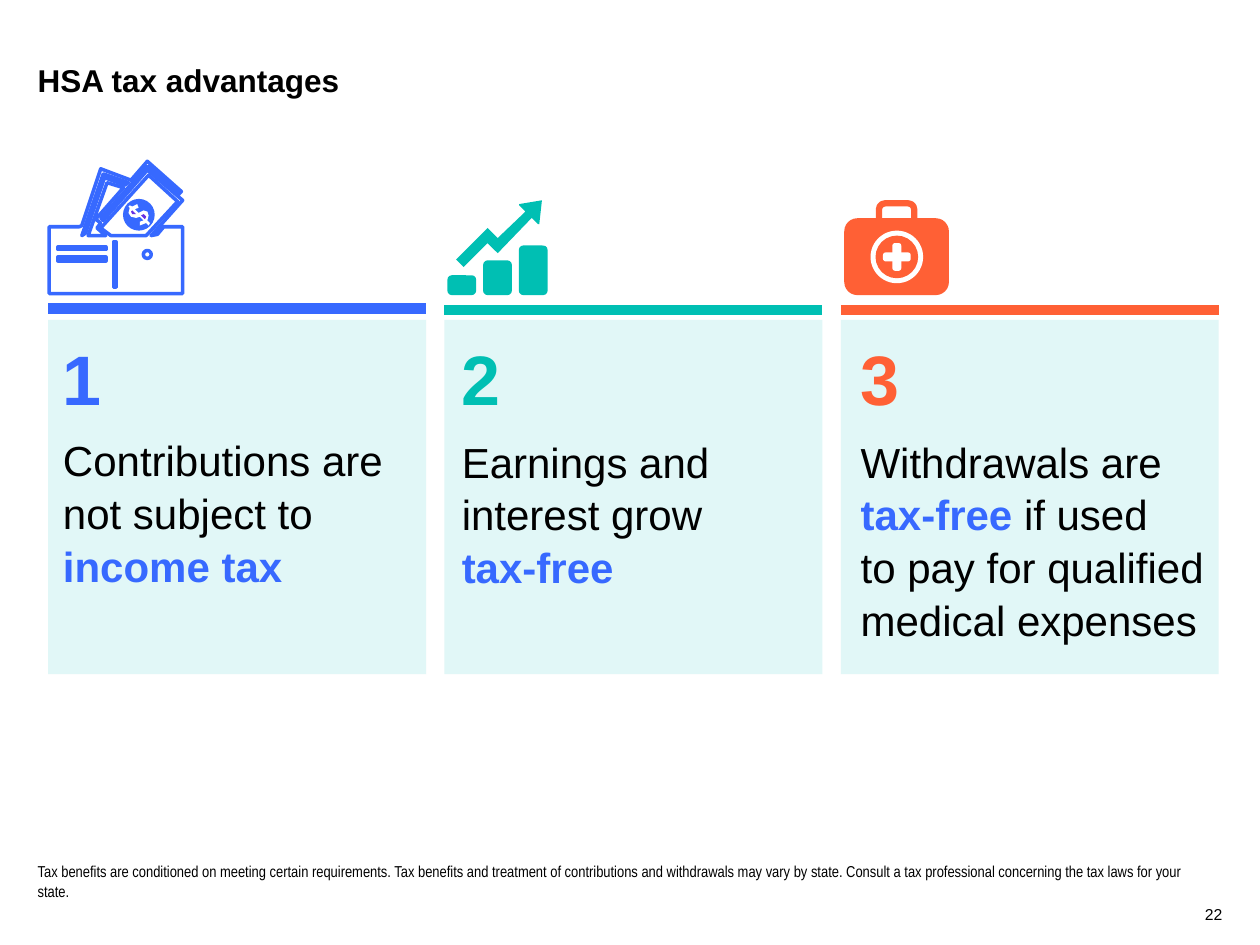
from lxml.etree import SubElement
from pptx import Presentation
from pptx.dml.color import RGBColor
from pptx.enum.shapes import MSO_CONNECTOR, MSO_SHAPE
from pptx.enum.text import MSO_ANCHOR, PP_ALIGN
from pptx.oxml.ns import qn
from pptx.util import Cm, Pt

BLUE, TEAL, CORAL = "3769FF", "00BFB3", "FF6035"
BLACK, WHITE, PALE, PURPLE = "000000", "FFFFFF", "E1F7F7", "6730E3"
UNIT = Cm(0.0254)

WALLET = [
    [(130, 180), (125, 186), (120, 187), (145, 159), (117, 135), (82, 175),
     (80, 173), (117, 132), (142, 154), (144, 152), (117, 128), (104, 143),
     (80, 134), (65, 179), (63, 180), (39, 180), (39, 233), (145, 233), (145, 180)],
    [(76, 174), (80, 177), (77, 181), (84, 187), (70, 187), (85, 145), (98, 149)],
    [(82, 138), (102, 145), (99, 147), (83, 141), (68, 185), (65, 187)],
    [(46, 196), (84, 196), (84, 198), (46, 198)],
    [(46, 204), (84, 204), (84, 207), (46, 207)],
    [(90, 192), (92, 192), (92, 228), (90, 228)],
    [(88, 187), (80, 181), (118, 139), (141, 160), (117, 186), (116, 187)],
]
DOLLAR = [[(118, 179), (116, 177), (111, 179), (111, 176), (114, 175), (111, 172),
           (108, 173), (104, 172), (102, 169), (103, 165), (102, 164), (103, 163),
           (105, 164), (109, 162), (110, 165), (107, 166), (110, 169), (114, 167),
           (117, 168), (118.5, 171), (117, 175), (119, 177)]]
LOOPS = [[(105, 170), (106, 170.5), (108, 170), (105, 167), (104.4, 168.5)],
         [(115, 171), (114, 170.3), (112, 171), (115, 174), (115.7, 172.5)]]
TREND = [[(387, 193), (395, 201), (422, 173), (427, 178), (428, 178), (430, 160),
          (430, 159), (412, 162), (412, 163), (417, 168), (395, 189), (387, 181),
          (362, 206), (368, 212)]]


def rgb(code):
    """Turn a hex string into a colour."""
    return RGBColor.from_string(code)


def paint(shape, fill, line=None, width=2):
    """Set the fill and outline of a shape and drop its shadow."""
    shape.shadow.inherit = False
    if fill:
        shape.fill.solid()
        shape.fill.fore_color.rgb = rgb(fill)
    else:
        shape.fill.background()
    if line:
        shape.line.color.rgb = rgb(line)
        shape.line.width = Pt(width)
    else:
        shape.line.fill.background()


def block(slide, kind, box, fill, line=None, width=2, round=None):
    """Add a preset shape, with box given in centimetres."""
    shape = slide.shapes.add_shape(kind, *map(Cm, box))
    if round is not None:
        shape.adjustments[0] = round
    paint(shape, fill, line, width)


def disc(slide, x, y, radius, fill, line=None):
    """Add a circle around a centre point."""
    box = (x - radius, y - radius, 2 * radius, 2 * radius)
    block(slide, MSO_SHAPE.OVAL, box, fill, line)


def outline(slide, paths, fill, line=None):
    """Add one freeform made of closed paths."""
    pen = slide.shapes.build_freeform(*paths[0][0], scale=UNIT)
    for path in paths:
        pen.move_to(*path[0])
        pen.add_line_segments(path[1:], close=True)
    paint(pen.convert_to_shape(), fill, line)


def rule(slide, x, y, width, color):
    """Add a thick horizontal line."""
    line = slide.shapes.add_connector(
        MSO_CONNECTOR.STRAIGHT, Cm(x), Cm(y), Cm(x + width), Cm(y))
    line.line.color.rgb = rgb(color)
    line.line.width = Pt(6)
    SubElement(line._element.spPr, qn("a:effectLst"))


def write(slide, box, runs, size, font="Arial", anchor=MSO_ANCHOR.TOP,
          align=PP_ALIGN.LEFT, space=1.05):
    """Add a text box from (text, colour, bold) runs, with None as a line break."""
    frame = slide.shapes.add_textbox(*map(Cm, box)).text_frame
    frame.word_wrap = True
    frame.vertical_anchor = anchor
    frame.margin_left = frame.margin_right = frame.margin_top = frame.margin_bottom = 0
    para = frame.paragraphs[0]
    para.alignment = align
    para.line_spacing = space
    for item in runs:
        if item is None:
            para.add_line_break()
            continue
        text, color, bold = item
        run = para.add_run()
        run.text = text
        run.font.name, run.font.size, run.font.bold = font, Pt(size), bold
        run.font.color.rgb = rgb(color)


def wallet(slide):
    """Draw the wallet with bank notes."""
    outline(slide, WALLET, WHITE, BLUE)
    disc(slide, 2.97, 5.13, 0.08, WHITE, BLUE)
    disc(slide, 2.8, 4.33, 0.32, BLUE)
    outline(slide, DOLLAR, WHITE)
    outline(slide, LOOPS, PURPLE)


def growth(slide):
    """Draw the rising bars and their arrow."""
    for i, height in enumerate((0.4, 0.7, 1.0)):
        box = (9.02 + 0.72 * i, 5.95 - height, 0.58, height)
        block(slide, MSO_SHAPE.ROUNDED_RECTANGLE, box, TEAL, round=0.09 / min(0.58, height))
    outline(slide, TREND, TEAL)


def kit(slide):
    """Draw the first aid case."""
    block(slide, MSO_SHAPE.ROUNDED_RECTANGLE, (17.72, 4.1, 0.71, 0.6), None, CORAL, 3.6, 0.2)
    block(slide, MSO_SHAPE.ROUNDED_RECTANGLE, (17.02, 4.4, 2.11, 1.55), CORAL, round=0.17)
    disc(slide, 18.08, 5.18, 0.53, WHITE)
    disc(slide, 18.08, 5.18, 0.43, CORAL)
    for wide, high in ((0.56, 0.18), (0.18, 0.56)):
        box = (18.08 - wide / 2, 5.18 - high / 2, wide, high)
        block(slide, MSO_SHAPE.ROUNDED_RECTANGLE, box, WHITE, round=0.3)


def card(slide, index, color, runs, icon, top, size):
    """Add one numbered panel with its line, text and icon."""
    left, inset = 0.97 + 7.99 * index, 1.27 + 8.04 * index
    block(slide, MSO_SHAPE.RECTANGLE, (left, 6.45, 7.62, 7.14), PALE)
    write(slide, (inset, top, *size), runs, 24)
    write(slide, (inset, 6.68, 1.27, 1.7), [(str(index + 1), color, True)], 40)
    rule(slide, left, top - 2.49, 7.62, color)
    icon(slide)


def main():
    """Build the slide and save it."""
    deck = Presentation()
    deck.slide_width, deck.slide_height = Cm(25.4), Cm(19.05)
    slide = deck.slides.add_slide(deck.slide_layouts[6])
    write(slide, (0.76, 1.19, 17.78, 1.78), [("HSA tax advantages", BLACK, True)], 18)
    cards = [
        (BLUE, [("Contributions are not subject to ", BLACK, False),
                ("income tax", BLUE, True)], wallet, 8.71, (6.99, 3.07)),
        (TEAL, [("Earnings and interest grow ", BLACK, False), None,
                ("tax-free", BLUE, True)], growth, 8.74, (6.99, 3.07)),
        (CORAL, [("Withdrawals are ", BLACK, False), ("tax-free", BLUE, True),
                 (" if used ", BLACK, False), None,
                 ("to pay for qualified medical expenses", BLACK, False)],
         kit, 8.74, (7.21, 4.11)),
    ]
    for index, parts in enumerate(cards):
        card(slide, index, *parts)
    write(slide, (23.62, 18.16, 1.02, 0.46), [("22", BLACK, False)], 9,
          anchor=MSO_ANCHOR.BOTTOM, align=PP_ALIGN.RIGHT, space=1)
    note = ("Tax benefits are conditioned on meeting certain requirements. "
            "Tax benefits and treatment of contributions and withdrawals may vary by state. "
            "Consult a tax professional concerning the tax laws for your state.")
    write(slide, (0.76, 17.4, 23.62, 0.76), [(note, BLACK, False)], 9,
          font="Arial Narrow", anchor=MSO_ANCHOR.BOTTOM)
    deck.save("out.pptx")


if __name__ == "__main__":
    main()
